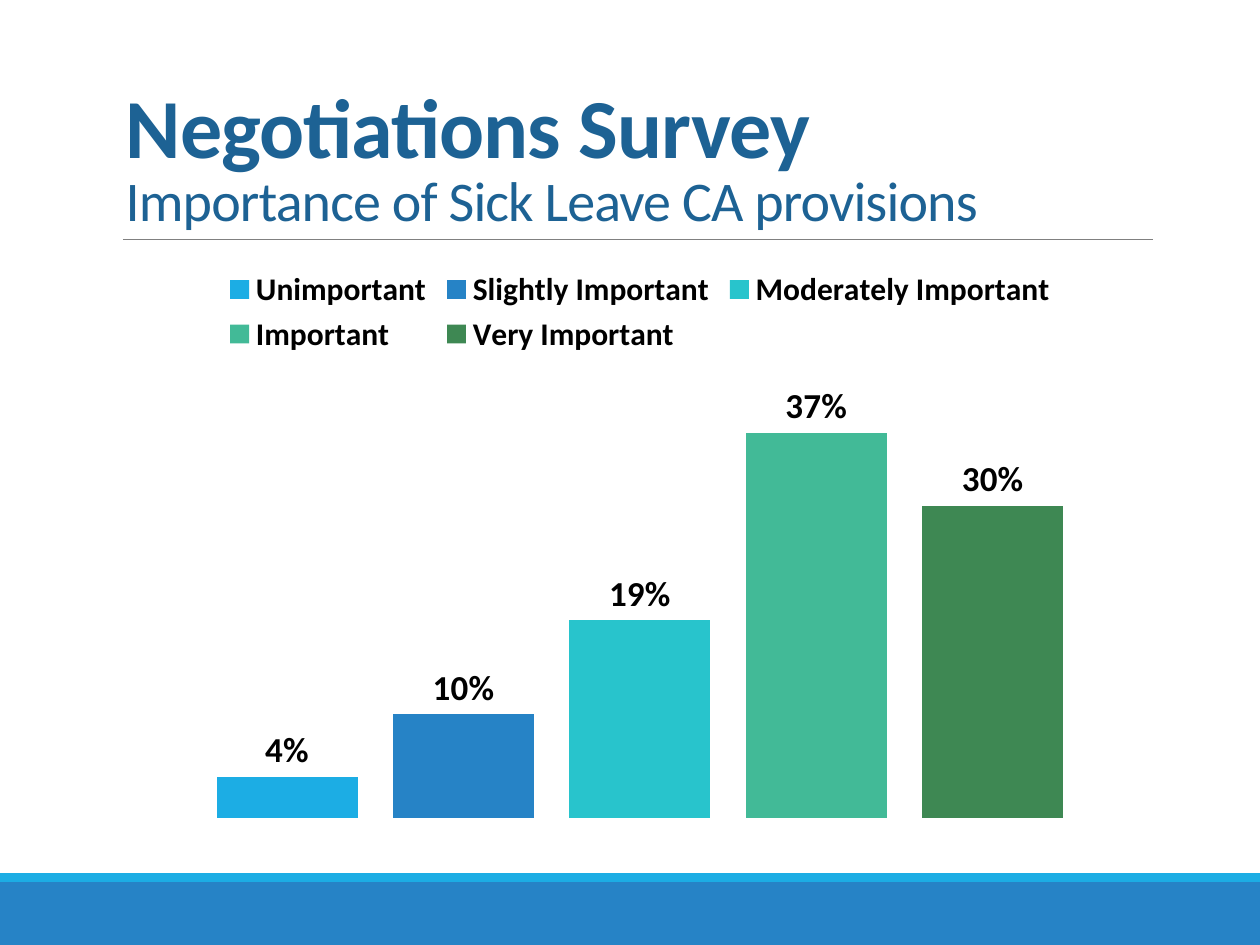
from dataclasses import dataclass
from lxml.etree import SubElement
from pptx import Presentation
from pptx.chart.data import CategoryChartData
from pptx.dml.color import RGBColor
from pptx.enum.chart import XL_CHART_TYPE, XL_LABEL_POSITION, XL_LEGEND_POSITION
from pptx.enum.shapes import MSO_CONNECTOR, MSO_SHAPE
from pptx.enum.text import MSO_ANCHOR, MSO_AUTO_SIZE, PP_ALIGN
from pptx.oxml import parse_xml
from pptx.oxml.ns import nsdecls, qn
from pptx.util import Emu, Pt


@dataclass(frozen=True)
class Theme:
    """Colours, font and type sizes of the slide."""
    font: str = "Calibri"
    ink: str = "000000"
    title: str = "1D6294"
    rule: str = "808080"
    band: str = "2683C6"
    edge: str = "1CADE4"
    head: int = 48
    sub: int = 32
    key: int = 18
    label: int = 20
    base: int = 10


THEME = Theme()
SCALE = 914400 / 126
SURVEY = [
    ("Unimportant", 0.04, "1CADE4"),
    ("Slightly Important", 0.10, "2683C6"),
    ("Moderately Important", 0.19, "28C4CC"),
    ("Important", 0.37, "42BA97"),
    ("Very Important", 0.30, "3E8853"),
]


def px(*sizes):
    """Turn pixel lengths into EMU."""
    return [Emu(round(size * SCALE)) for size in sizes]


def style(font, size, color, bold=False):
    """Set the face, size, colour and weight of a font."""
    font.name = THEME.font
    font.size = Pt(size)
    font.bold = bold
    font.color.rgb = RGBColor.from_string(color)


def add_bar(slide, box, color):
    """Draw a plain filled bar."""
    bar = slide.shapes.add_shape(MSO_SHAPE.RECTANGLE, *px(*box))
    bar.shadow.inherit = False
    bar.fill.solid()
    bar.fill.fore_color.rgb = RGBColor.from_string(color)
    bar.line.fill.background()


def add_foot(slide, box):
    """Draw the footer band with its light top edge."""
    left, top, width, height = box
    edge = 9
    add_bar(slide, (left, top + edge, width, height - edge), THEME.band)
    add_bar(slide, (left, top, width, edge), THEME.edge)


def add_head(slide, box):
    """Place the two-line title and the rule below it."""
    left, top, width, height = box
    base = top + height
    rule = slide.shapes.add_connector(
        MSO_CONNECTOR.STRAIGHT, *px(left + 10, base, left + width, base))
    rule.line.color.rgb = RGBColor.from_string(THEME.rule)
    rule.line.width = Pt(0.5)
    SubElement(rule._element.spPr, qn("a:effectLst"))

    title = slide.shapes.title
    title.left, title.top, title.width, title.height = px(*box)
    frame = title.text_frame
    frame.text = "Negotiations Survey\vImportance of Sick Leave CA provisions"
    frame.word_wrap = True
    frame.auto_size = MSO_AUTO_SIZE.NONE
    frame.vertical_anchor = MSO_ANCHOR.BOTTOM
    para = frame.paragraphs[0]
    para.alignment = PP_ALIGN.LEFT
    para.line_spacing = 0.85
    for run, size in zip(para.runs, (THEME.head, THEME.sub)):
        style(run.font, size, THEME.title, size == THEME.head)
        run.font._element.set("spc", "-50")


def set_plot(chart, **parts):
    """Fix the inner plot area as fractions of the chart."""
    area = chart._chartSpace.chart.plotArea
    for old in area.findall(qn("c:layout")):
        area.remove(old)
    modes = '<c:xMode val="edge"/><c:yMode val="edge"/>'
    sizes = "".join(f'<c:{key} val="{val}"/>' for key, val in parts.items())
    area.insert(0, parse_xml(
        f'<c:layout {nsdecls("c")}><c:manualLayout><c:layoutTarget val="inner"/>'
        f"{modes}{sizes}</c:manualLayout></c:layout>"))


def add_graph(slide, box):
    """Place the column chart with one series for each answer."""
    data = CategoryChartData(number_format="0%")
    data.categories = ["1"]
    for name, share, _ in SURVEY:
        data.add_series(name, [share])
    chart = slide.shapes.add_chart(
        XL_CHART_TYPE.COLUMN_CLUSTERED, *px(*box), data).chart
    style(chart.font, THEME.base, THEME.ink)
    chart.has_title = False
    chart.has_legend = True
    chart.legend.position = XL_LEGEND_POSITION.TOP
    chart.legend.include_in_layout = False
    style(chart.legend.font, THEME.key, THEME.ink, True)

    axis = chart.value_axis
    axis.minimum_scale, axis.maximum_scale = 0, 0.4
    axis.has_major_gridlines = False
    axis.tick_labels.number_format = "0%"
    axis.tick_labels.number_format_is_linked = False
    axis.visible = chart.category_axis.visible = False

    plot = chart.plots[0]
    plot.gap_width, plot.overlap = 150, -25
    plot.vary_by_categories = False
    for bars, (_, _, color) in zip(plot.series, SURVEY):
        bars.format.fill.solid()
        bars.format.fill.fore_color.rgb = RGBColor.from_string(color)
        labels = bars.data_labels
        labels.show_value = True
        labels.number_format = "0%"
        labels.number_format_is_linked = False
        labels.position = XL_LABEL_POSITION.OUTSIDE_END
        style(labels.font, THEME.label, THEME.ink, True)
    set_plot(chart, x=0.03, y=0.25, w=0.94, h=0.71)


def main():
    """Build and save the slide."""
    deck = Presentation()
    deck.slide_width, deck.slide_height = px(1260, 945)
    slide = deck.slides.add_slide(deck.slide_layouts[5])
    add_foot(slide, (0, 873, 1260, 72))
    add_head(slide, (113, 39, 1040, 200))
    add_graph(slide, (77, 255, 1126, 587))
    deck.save("out.pptx")


if __name__ == "__main__":
    main()
